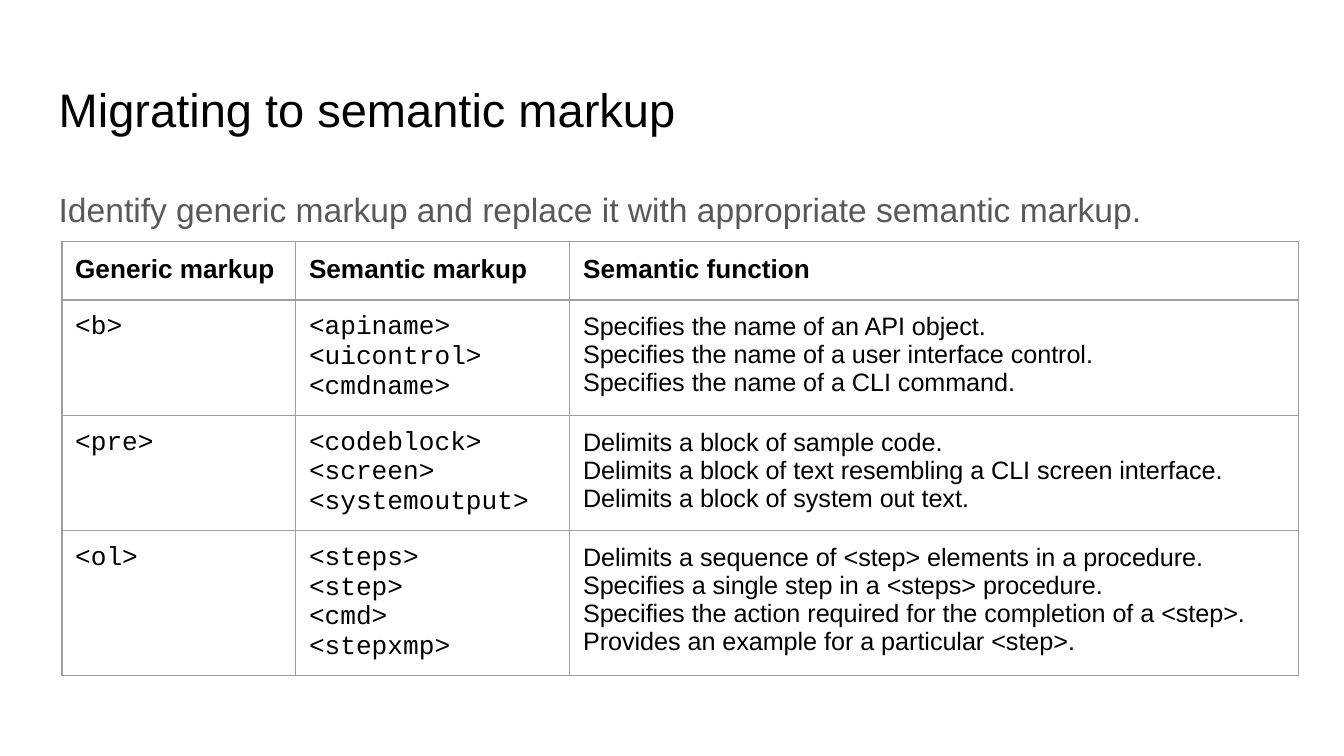
from lxml.etree import SubElement
from pptx import Presentation
from pptx.dml.color import RGBColor
from pptx.enum.text import MSO_ANCHOR as Anchor, MSO_AUTO_SIZE as AutoSize, PP_ALIGN as Align
from pptx.oxml.ns import qn
from pptx.util import Cm, Pt

COLORS = {"text": "000000", "subtitle": "595959", "border": "9E9E9E"}
INSET = Cm(0.25)


def write(frame, lines, size, color="text", name="Arial", bold=False):
    """Fill a text frame with one paragraph per line in a single format."""
    frame.word_wrap = True
    for index, line in enumerate(lines):
        para = frame.paragraphs[0] if index == 0 else frame.add_paragraph()
        para.alignment = Align.LEFT
        span = para.add_run()
        span.text = line
        for key, value in {"name": name, "size": Pt(size), "bold": bold}.items():
            setattr(span.font, key, value)
        span.font.color.rgb = RGBColor.from_string(COLORS[color])


def add_borders(cell):
    """Draw a thin line on all four sides of a table cell."""
    properties = cell._tc.get_or_add_tcPr()
    for side in ("lnL", "lnR", "lnT", "lnB"):
        line = SubElement(properties, qn(f"a:{side}"), w=str(Pt(0.75)))
        fill = SubElement(line, qn("a:solidFill"))
        SubElement(fill, qn("a:srgbClr"), val=COLORS["border"])


deck = Presentation()
deck.slide_width, deck.slide_height = Cm(25.4), Cm(14.29)
page = deck.slides.add_slide(deck.slide_layouts[5])

# Title and subtitle
title = page.shapes.title
title.left, title.top, title.width, title.height = Cm(0.86), Cm(1.24), Cm(23.67), Cm(1.6)
subtitle = page.shapes.add_textbox(Cm(0.86), Cm(3.2), Cm(23.67), Cm(1.4))
for box, anchor in ((title, Anchor.BOTTOM), (subtitle, Anchor.TOP)):
    frame_format = {
        "margin_left": INSET, "margin_right": INSET,
        "margin_top": INSET, "margin_bottom": INSET,
        "auto_size": AutoSize.NONE, "vertical_anchor": anchor,
    }
    for key, value in frame_format.items():
        setattr(box.text_frame, key, value)
write(title.text_frame, ["Migrating to semantic markup"], 25.2)
write(subtitle.text_frame,
      ["Identify generic markup and replace it with appropriate semantic markup."],
      18, "subtitle")
subtitle.text_frame.paragraphs[0].line_spacing = 1.15

# Table content: each cell is a list of paragraphs
rows = [
    (["Generic markup"], ["Semantic markup"], ["Semantic function"]),
    (["<b>"],
     ["<apiname>", "<uicontrol>", "<cmdname>"],
     ["Specifies the name of an API object.",
      "Specifies the name of a user interface control.",
      "Specifies the name of a CLI command."]),
    (["<pre>"],
     ["<codeblock>", "<screen>", "<systemoutput>"],
     ["Delimits a block of sample code.",
      "Delimits a block of text resembling a CLI screen interface. "
      "Delimits a block of system out text."]),
    (["<ol>"],
     ["<steps>", "<step>", "<cmd>", "<stepxmp>"],
     ["Delimits a sequence of <step> elements in a procedure.",
      "Specifies a single step in a <steps> procedure.",
      "Specifies the action required for the completion of a <step>.",
      "Provides an example for a particular <step>."]),
]
widths = [4.42, 5.18, 13.77]
heights = [1.1, 2.18, 2.18, 2.74]

# Table grid
table = page.shapes.add_table(len(rows), len(widths), Cm(1.17), Cm(4.57),
                              Cm(sum(widths)), Cm(sum(heights))).table
table.first_row = table.horz_banding = False
for column, width in zip(table.columns, widths):
    column.width = Cm(width)
for row, height in zip(table.rows, heights):
    row.height = Cm(height)

# Table cells: bold header, code in the first two columns, prose in the last
header = {"size": 14, "bold": True}
code = {"size": 14, "name": "Courier New"}
prose = {"size": 13.5}
for row_index, row in enumerate(rows):
    styles = [code, code, prose] if row_index else [header] * 3
    for column_index, (lines, style) in enumerate(zip(row, styles)):
        cell = table.cell(row_index, column_index)
        for side in ("left", "right", "top", "bottom"):
            setattr(cell, f"margin_{side}", INSET)
        add_borders(cell)
        cell.fill.background()
        write(cell.text_frame, lines, **style)

deck.save("out.pptx")
